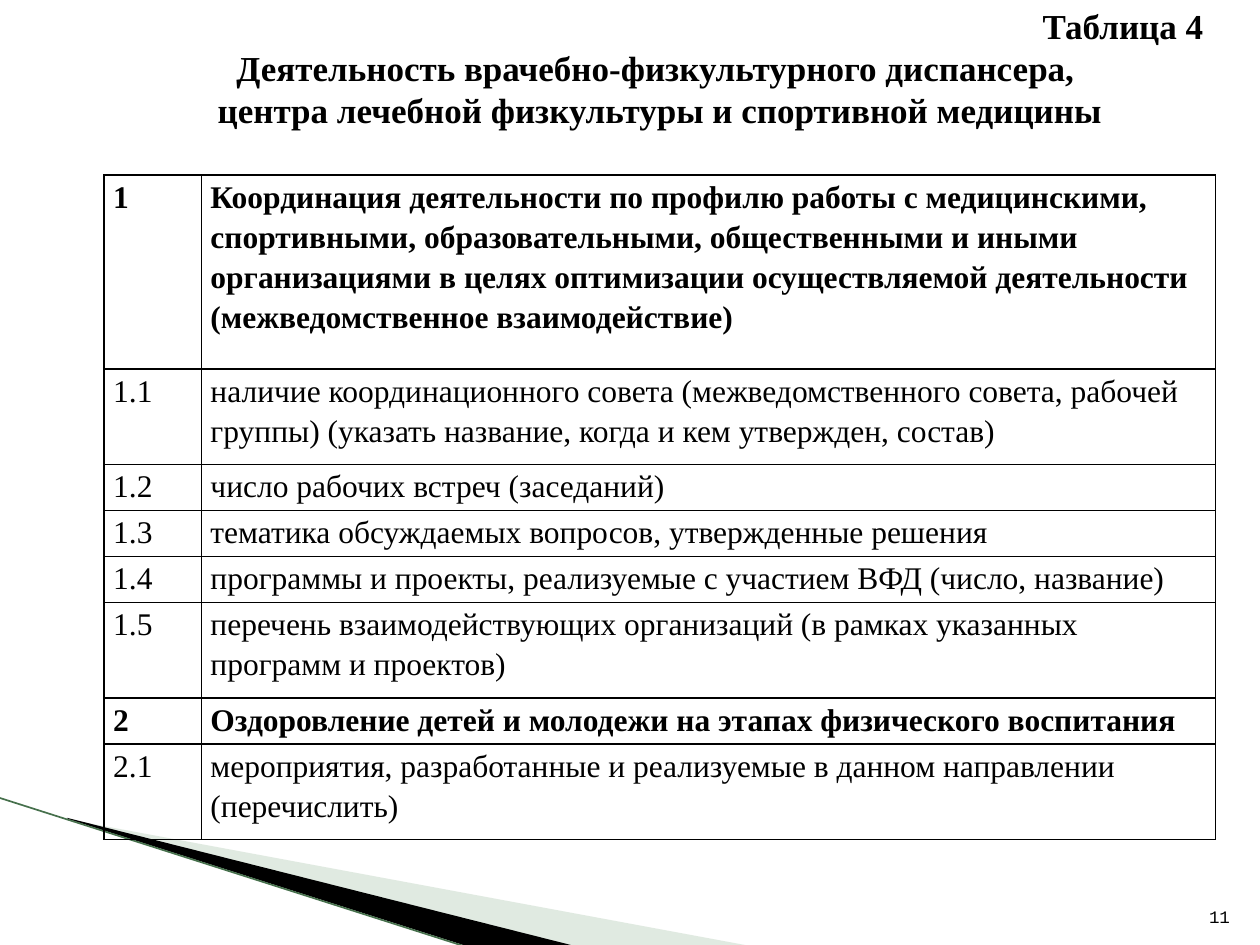
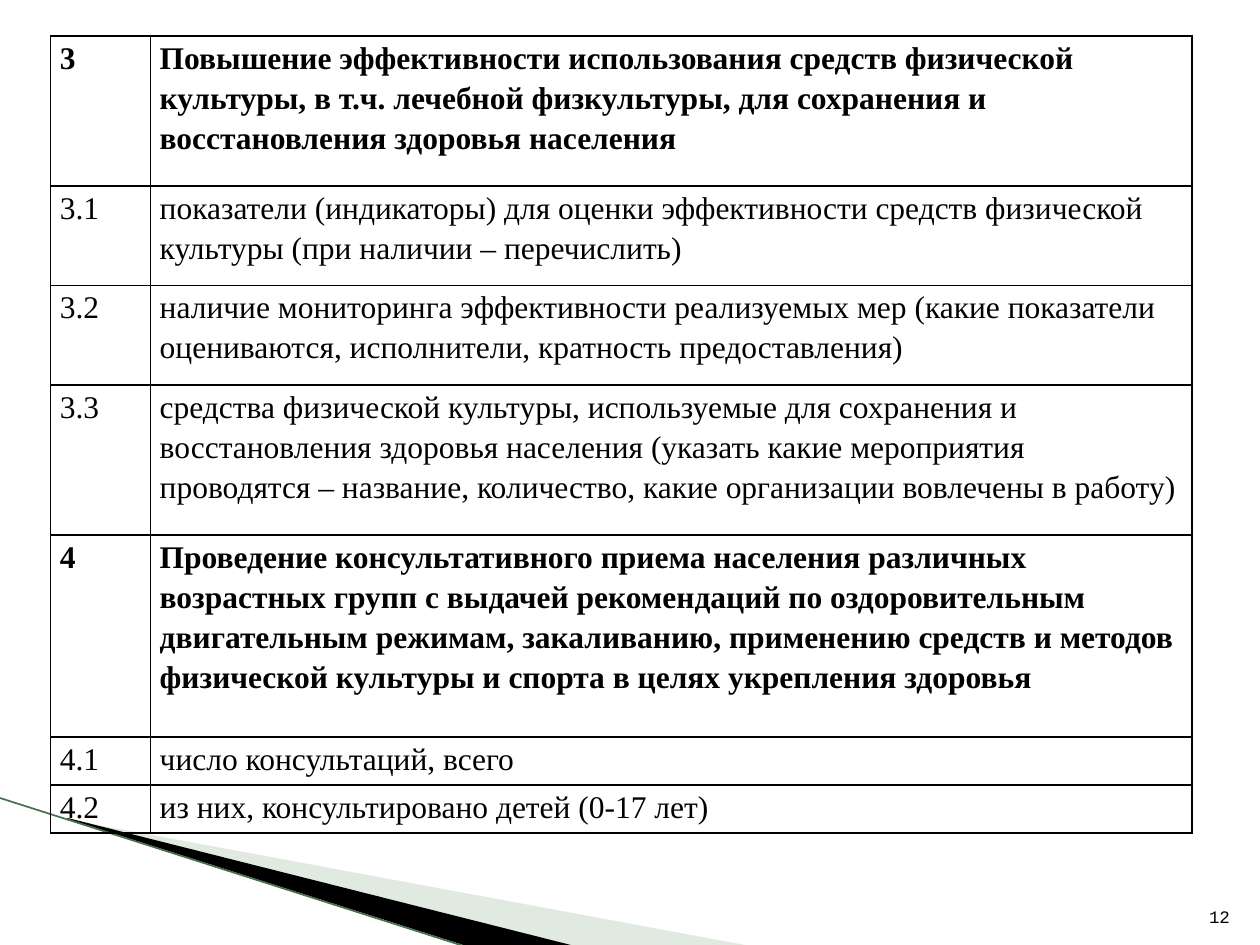
from dataclasses import dataclass

from lxml import etree
from pptx import Presentation
from pptx.dml.color import RGBColor
from pptx.enum import shapes, text
from pptx.oxml import ns
from pptx.util import Pt

BLACK = RGBColor(0x00, 0x00, 0x00)
PALE_GREEN = RGBColor(0xB3, 0xCB, 0xB5)
EDGE_GREEN = RGBColor(0x46, 0x70, 0x4C)

BODY_FONT = "Times New Roman"
NUMBER_FONT = "Courier New"


@dataclass(frozen=True)
class Wedge:
    box: tuple[float, float, float, float]
    points: tuple[tuple[float, float], ...]
    color: RGBColor
    opacity: int = 100


@dataclass(frozen=True)
class Row:
    number: str
    content: str
    height: float

    @property
    def is_section(self) -> bool:
        return "." not in self.number


@dataclass(frozen=True)
class Page:
    number: int
    left: float
    top: float
    columns: tuple[float, float]
    rows: tuple[Row, ...]
    title: tuple[str, ...] = ()


WEDGES = (
    Wedge((56.2, 393.8, 299.5, 113.8),
          ((39.6, 468.4), (429.5, 540.7), (328.3, 540.7), (39.6, 468)), PALE_GREEN, 40),
    Wedge((-4.3, 455.8, 299.5, 66.2),
          ((38.2, 467.3), (329, 540.7), (268.5, 541.2), (38.9, 468)), BLACK),
)

PAGES = (
    Page(
        number=11, left=59.5, top=100.1, columns=(55.6, 579.6),
        title=(
            "Таблица 4",
            "Деятельность врачебно-физкультурного диспансера, ",
            "центра лечебной физкультуры и спортивной медицины",
        ),
        rows=(
            Row("1", "Координация деятельности по профилю работы с медицинскими, "
                "спортивными, образовательными, общественными и иными организациями "
                "в целях оптимизации осуществляемой деятельности "
                "(межведомственное взаимодействие)", 110.7),
            Row("1.1", "наличие координационного совета (межведомственного совета, "
                "рабочей группы) (указать название, когда и кем утвержден, состав)", 54.6),
            Row("1.2", "число рабочих встреч (заседаний)", 26.3),
            Row("1.3", "тематика обсуждаемых вопросов, утвержденные решения", 26.3),
            Row("1.4", "программы и проекты, реализуемые с участием ВФД "
                "(число, название)", 26.3),
            Row("1.5", "перечень взаимодействующих организаций (в рамках указанных "
                "программ и проектов)", 54.6),
            Row("2", "Оздоровление детей и молодежи на этапах физического воспитания", 26.3),
            Row("2.1", "мероприятия, разработанные и реализуемые в данном направлении "
                "(перечислить)", 54.6),
        ),
    ),
    Page(
        number=12, left=29, top=20.7, columns=(57.1, 595.2),
        rows=(
            Row("3", "Повышение эффективности использования средств физической культуры, "
                "в т.ч. лечебной физкультуры, для сохранения и восстановления "
                "здоровья населения", 85.7),
            Row("3.1", "показатели (индикаторы) для оценки эффективности средств "
                "физической культуры (при наличии – перечислить)", 56.8),
            Row("3.2", "наличие мониторинга эффективности реализуемых мер (какие показатели "
                "оцениваются, исполнители, кратность предоставления)", 56.8),
            Row("3.3", "средства физической культуры, используемые для сохранения и "
                "восстановления здоровья населения (указать какие мероприятия проводятся – "
                "название, количество, какие организации вовлечены в работу)", 85.7),
            Row("4", "Проведение консультативного приема населения различных возрастных "
                "групп с выдачей рекомендаций по оздоровительным двигательным режимам, "
                "закаливанию, применению средств и методов физической культуры и спорта "
                "в целях укрепления здоровья", 115.5),
            Row("4.1", "число консультаций, всего", 27.4),
            Row("4.2", "из них, консультировано детей (0-17 лет)", 27.4),
        ),
    ),
)


def write(paragraph, content: str, *, size: float, font: str = BODY_FONT,
          bold: bool = False, align=text.PP_ALIGN.LEFT,
          line_spacing: float | None = None, space_after: float = 0) -> None:
    paragraph.alignment = align
    paragraph.line_spacing = line_spacing
    paragraph.space_after = Pt(space_after)
    run = paragraph.add_run()
    run.text = content
    run.font.name = font
    run.font.size = Pt(size)
    run.font.bold = bold
    run.font.color.rgb = BLACK


def add_text_frame(slide, left: float, top: float, width: float, height: float, anchor):
    frame = slide.shapes.add_textbox(Pt(left), Pt(top), Pt(width), Pt(height)).text_frame
    frame.word_wrap = True
    frame.vertical_anchor = anchor
    return frame


def reframe(shape, box: tuple[float, float, float, float]) -> None:
    """Give the outline a new frame while its points keep their place on the slide."""
    left, top, width, height = (Pt(length) for length in box)
    shift_x, shift_y = shape.left - left, shape.top - top
    outline = shape._element.find(".//" + ns.qn("a:path"))
    outline.set("w", str(width))
    outline.set("h", str(height))
    for point in outline.iter(ns.qn("a:pt")):
        point.set("x", str(int(point.get("x")) + shift_x))
        point.set("y", str(int(point.get("y")) + shift_y))
    shape.left, shape.top, shape.width, shape.height = left, top, width, height


def add_wedge(slide, wedge: Wedge) -> None:
    start, *rest = [(Pt(x), Pt(y)) for x, y in wedge.points]
    builder = slide.shapes.build_freeform(*start)
    builder.add_line_segments(rest, close=True)
    shape = builder.convert_to_shape()
    reframe(shape, wedge.box)
    shape.shadow.inherit = False
    shape.fill.solid()
    shape.fill.fore_color.rgb = wedge.color
    shape.line.fill.background()
    if wedge.opacity < 100:
        color = shape.fill._xPr.find(".//" + ns.qn("a:srgbClr"))
        etree.SubElement(color, ns.qn("a:alpha"), val=str(wedge.opacity * 1000))


def add_corner(slide) -> None:
    for wedge in WEDGES:
        add_wedge(slide, wedge)
    edge = slide.shapes.add_connector(
        shapes.MSO_CONNECTOR.STRAIGHT, Pt(-0.7), Pt(455.8), Pt(267.5), Pt(541.4))
    edge.line.color.rgb = EDGE_GREEN
    edge.line.width = Pt(0.95)
    etree.SubElement(edge._element.spPr, ns.qn("a:effectLst"))


def add_page_number(slide, number: int) -> None:
    frame = add_text_frame(slide, 681.1, 504.7, 28.8, 28.8, text.MSO_ANCHOR.BOTTOM)
    write(frame.paragraphs[0], str(number), size=10, font=NUMBER_FONT,
          align=text.PP_ALIGN.RIGHT)


def add_borders(cell) -> None:
    properties = cell._tc.get_or_add_tcPr()
    for side in ("lnL", "lnR", "lnT", "lnB"):
        line = etree.SubElement(properties, ns.qn(f"a:{side}"), w=str(Pt(1)))
        fill = etree.SubElement(line, ns.qn("a:solidFill"))
        etree.SubElement(fill, ns.qn("a:srgbClr"), val=str(BLACK))


def fill_cell(cell, content: str, bold: bool) -> None:
    cell.margin_left = cell.margin_right = Pt(5.2)
    cell.margin_top = cell.margin_bottom = 0
    add_borders(cell)
    cell.fill.background()
    write(cell.text_frame.paragraphs[0], content, size=18, bold=bold,
          line_spacing=1.15, space_after=10)


def add_activity_table(slide, page: Page) -> None:
    height = sum(row.height for row in page.rows)
    table = slide.shapes.add_table(
        len(page.rows), len(page.columns), Pt(page.left), Pt(page.top),
        Pt(sum(page.columns)), Pt(height)).table
    table.first_row = table.horz_banding = False
    for column, width in zip(table.columns, page.columns):
        column.width = Pt(width)
    for index, row in enumerate(page.rows):
        table.rows[index].height = Pt(row.height)
        for column_index, content in enumerate((row.number, row.content)):
            fill_cell(table.cell(index, column_index), content, row.is_section)


def add_title(slide, page: Page) -> None:
    frame = add_text_frame(slide, page.left, -1.4, sum(page.columns), 79.9,
                           text.MSO_ANCHOR.MIDDLE)
    frame.auto_size = text.MSO_AUTO_SIZE.SHAPE_TO_FIT_TEXT
    for index, line in enumerate(page.title):
        paragraph = frame.add_paragraph() if index else frame.paragraphs[0]
        align = text.PP_ALIGN.CENTER if index else text.PP_ALIGN.RIGHT
        write(paragraph, line, size=20, bold=True, align=align)


def main() -> None:
    presentation = Presentation()
    presentation.slide_width, presentation.slide_height = Pt(720), Pt(540)
    for page in PAGES:
        slide = presentation.slides.add_slide(presentation.slide_layouts[6])
        add_corner(slide)
        add_page_number(slide, page.number)
        add_activity_table(slide, page)
        if page.title:
            add_title(slide, page)
    presentation.save("out.pptx")


if __name__ == "__main__":
    main()
